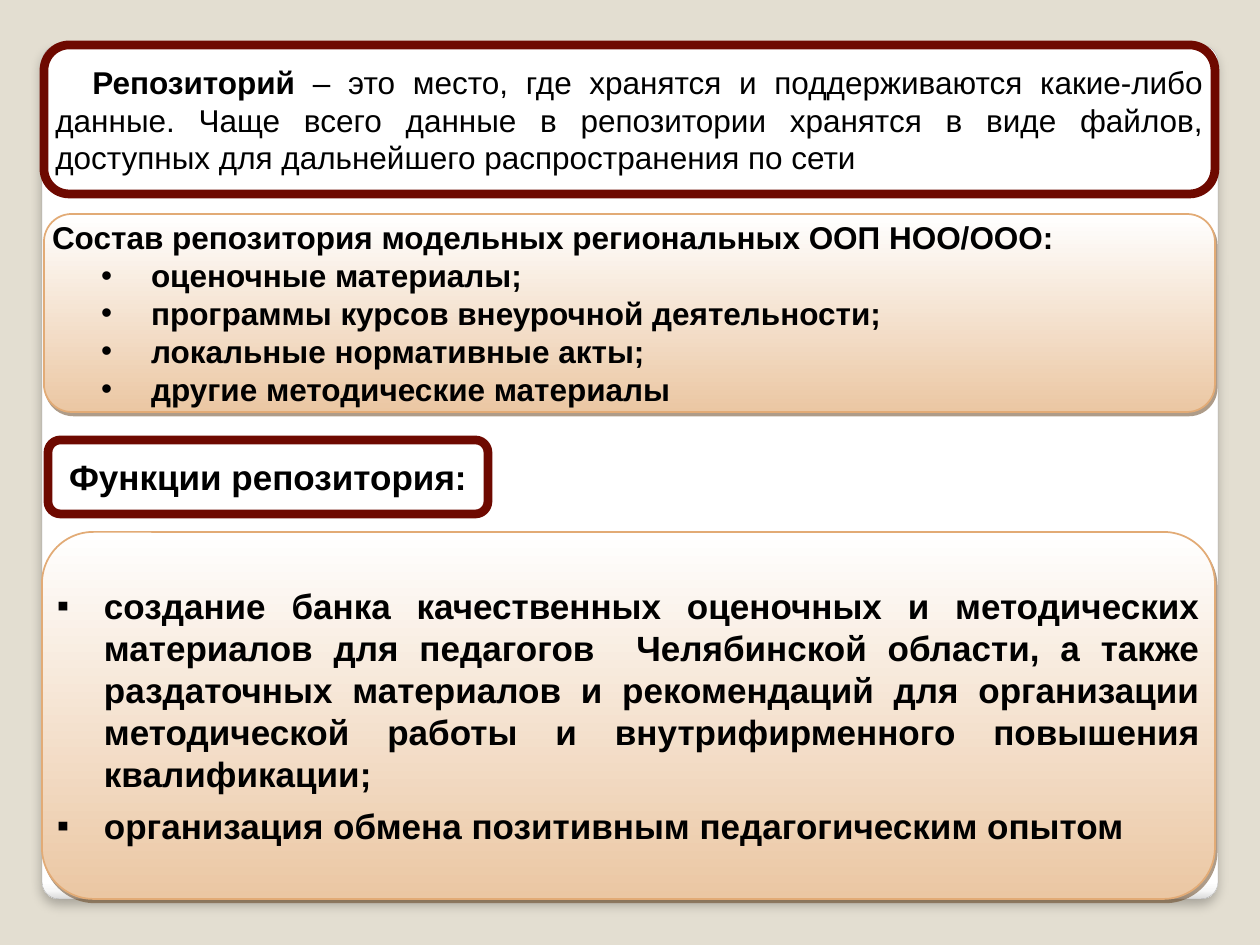
import dataclasses

import pptx
import pptx.dml.color
import pptx.enum.shapes
import pptx.enum.text
import pptx.oxml.ns
import pptx.oxml.xmlchemy
import pptx.util
from lxml import etree

SCALE = 914400 / 126  # EMU in one px
ALIGN = pptx.enum.text.PP_ALIGN


@dataclasses.dataclass(frozen=True)
class Theme:
    back: str = "E3DED1"
    white: str = "FFFFFF"
    ink: str = "000000"
    frame: str = "6E0900"
    edge: str = "E2AB76"
    rim: str = "A4A4A4"
    font: str = "Arial"
    body: int = 18
    large: int = 20
    card: tuple = ((0, "FFFFFF"), (98, "FFFFFF"), (99, "F7F7F7"), (100, "DADADA"))
    peach: tuple = ((0, "FFFFFF"), (100, "EBC7A3"))
    # colour, opacity %, blur pt, distance pt, angle
    soft: tuple = ("000000", 25, 6, 4, 90)
    drop: tuple = ("5F3A14", 50, 0, 2.2, 63)


THEME = Theme()


def px(num):
    return round(num * SCALE)


def rgb(code):
    return pptx.dml.color.RGBColor.from_string(code)


def add_node(top, tag, **attrs):
    node = etree.SubElement(top, pptx.oxml.ns.qn("a:" + tag))
    for key, val in attrs.items():
        node.set(key, str(val))
    return node


def fill_fade(shape, stops):
    """Fill from top to bottom through the given stops."""
    shape.fill.gradient()
    shape.fill.gradient_angle = 270
    group = shape.element.spPr.find(".//" + pptx.oxml.ns.qn("a:gsLst"))
    for old in list(group):
        group.remove(old)
    for place, code in stops:
        stop = add_node(group, "gs", pos=place * 1000)
        add_node(stop, "srgbClr", val=code)


def cast_shade(shape, shade):
    code, alpha, blur, dist, angle = shade
    group = shape.element.spPr.find(pptx.oxml.ns.qn("a:effectLst"))
    outer = add_node(group, "outerShdw", blurRad=pptx.util.Pt(blur),
                     dist=pptx.util.Pt(dist), dir=angle * 60000,
                     algn="t", rotWithShape=0)
    color = add_node(outer, "srgbClr", val=code)
    add_node(color, "alpha", val=alpha * 1000)


def add_box(slide, rect, curve, fill, line, width, shade=None, inset=0):
    """Rounded box; fill is one colour or a tuple of stops."""
    kind = pptx.enum.shapes.MSO_SHAPE.ROUNDED_RECTANGLE
    shape = slide.shapes.add_shape(kind, *map(px, rect))
    shape.adjustments[0] = curve
    shape.shadow.inherit = False
    if isinstance(fill, tuple):
        fill_fade(shape, fill)
    else:
        shape.fill.solid()
        shape.fill.fore_color.rgb = rgb(fill)
    shape.line.color.rgb = rgb(line)
    shape.line.width = pptx.util.Pt(width)
    if shade:
        cast_shade(shape, shade)
    frame = shape.text_frame
    frame.word_wrap = True
    frame.vertical_anchor = pptx.enum.text.MSO_ANCHOR.MIDDLE
    frame.margin_left = frame.margin_right = px(inset)
    frame.margin_top = frame.margin_bottom = px(inset)
    return frame


def add_frame(slide, rect):
    return add_box(slide, rect, 0.17, THEME.white, THEME.frame, 5, inset=4)


def add_panel(slide, rect):
    return add_box(slide, rect, 0.14, THEME.peach, THEME.edge, 1, THEME.drop)


def add_para(frame, runs, size, align=ALIGN.JUSTIFY, left=0, indent=0,
             before=0, after=0, mark=None):
    """Add a paragraph of (text, bold) runs, with a bullet if mark is set."""
    para = frame.paragraphs[0]
    if para.runs:
        para = frame.add_paragraph()
    para.alignment = align
    para.space_before = pptx.util.Pt(before)
    para.space_after = pptx.util.Pt(after)
    props = para._p.get_or_add_pPr()
    props.set("marL", str(px(left)))
    props.set("indent", str(px(indent)))
    if mark:
        add_node(props, "buFont", typeface=THEME.font)
        add_node(props, "buChar", char=mark)
    for text, bold in runs:
        run = para.add_run()
        run.text = text
        run.font.name = THEME.font
        run.font.size = pptx.util.Pt(size)
        run.font.bold = bold
        run.font.color.rgb = rgb(THEME.ink)


def main():
    deck = pptx.Presentation()
    deck.slide_width, deck.slide_height = px(1260), px(945)
    slide = deck.slides.add_slide(deck.slide_layouts[6])
    slide.background.fill.solid()
    slide.background.fill.fore_color.rgb = rgb(THEME.back)

    # White card behind everything
    add_box(slide, (42, 45, 1176, 854), 0.02, THEME.card, THEME.rim, 0.16,
            THEME.soft)

    # Definition
    about = add_frame(slide, (44, 45, 1171, 149))
    add_para(about, [
        ("Репозиторий", True),
        (" – это место, где хранятся и поддерживаются какие-либо данные. "
         "Чаще всего данные в репозитории хранятся в виде файлов, доступных "
         "для дальнейшего распространения по сети", False),
    ], THEME.body, indent=37, after=10)

    # Contents of the repository
    parts = add_panel(slide, (44, 214, 1171, 198))
    add_para(parts, [("Состав репозитория модельных региональных ООП НОО/ООО:",
                      True)], THEME.body)
    for text in ("оценочные материалы;",
                 "программы курсов внеурочной деятельности;",
                 "локальные нормативные акты;",
                 "другие методические материалы"):
        add_para(parts, [(text, True)], THEME.body, left=99, indent=-50,
                 mark="•")

    # Heading of the functions
    head = add_frame(slide, (48, 440, 440, 74))
    add_para(head, [("Функции репозитория:", True)], THEME.large,
             align=ALIGN.CENTER, after=10)

    # Functions
    tasks = add_panel(slide, (42, 532, 1173, 367))
    for text in ("создание банка качественных оценочных и методических "
                 "материалов для педагогов  Челябинской области, а также "
                 "раздаточных материалов и рекомендаций для организации "
                 "методической работы и внутрифирменного повышения "
                 "квалификации;",
                 "организация обмена позитивным педагогическим опытом"):
        add_para(tasks, [(text, True)], THEME.large, left=47, indent=-47,
                 before=6, mark="▪")

    deck.save("out.pptx")


if __name__ == "__main__":
    main()
